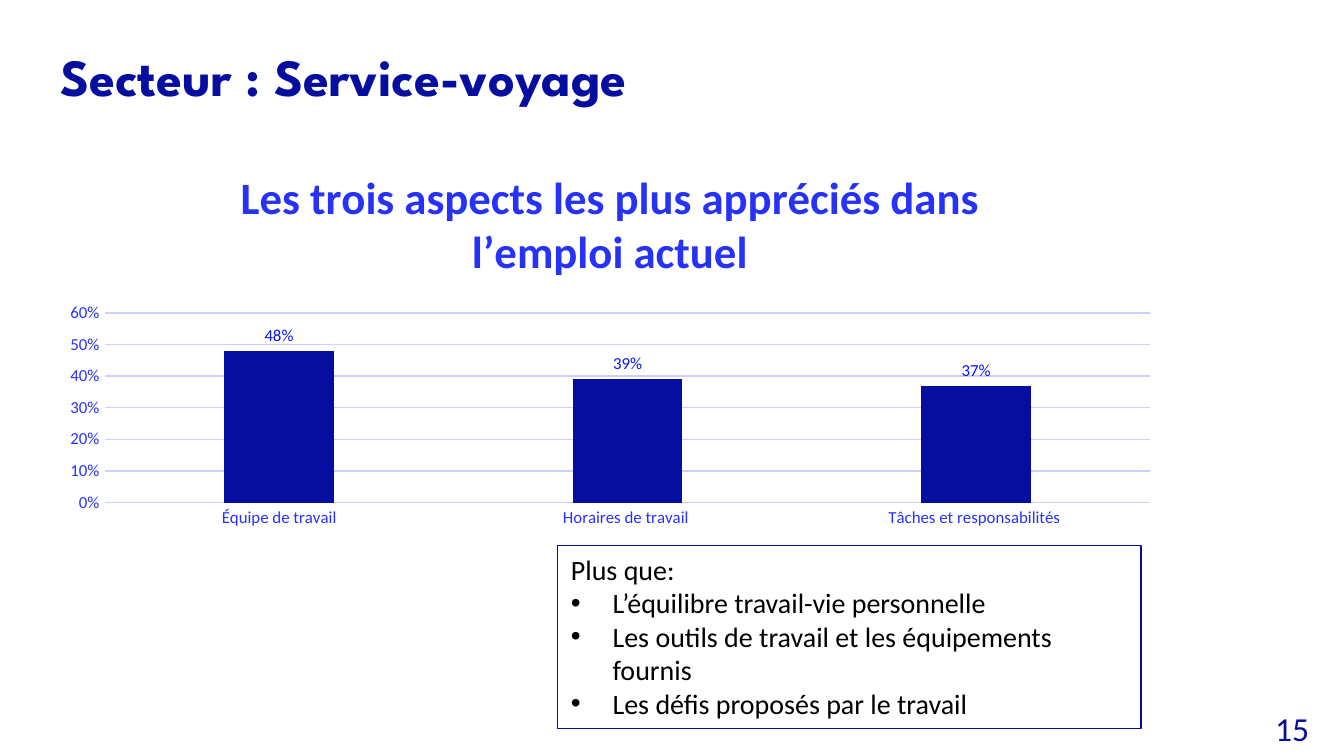
from lxml import etree
from pptx import Presentation
from pptx.chart.data import CategoryChartData as ChartData
from pptx.dml.color import RGBColor as Rgb
from pptx.enum.chart import XL_CHART_TYPE as Kind, XL_LABEL_POSITION as Spot, XL_TICK_MARK as Tick
from pptx.enum.shapes import MSO_SHAPE as Shape
from pptx.enum.text import MSO_ANCHOR as Anchor, PP_ALIGN as Align
from pptx.oxml import parse_xml
from pptx.oxml.ns import nsdecls, qn
from pptx.util import Inches, Pt

HUES = {"navy": "060E9F", "blue": "2732F7", "label": "0915F2",
        "pale": "CDD0FD", "black": "000000"}
WIDE, HIGH = 8.36, 2.9
ASPECTS = {"Équipe de travail": 0.48, "Horaires de travail ": 0.39,
           "Tâches et responsabilités ": 0.37}
OTHERS = ["L’équilibre travail-vie personnelle",
          "Les outils de travail et les équipements fournis",
          "Les défis proposés par le travail"]


def hue(name):
    """Return a named colour."""
    return Rgb.from_string(HUES[name])


def style(font, size, color, bold=False, face="Calibri"):
    """Set the look of a font."""
    font.name, font.size, font.bold = face, Pt(size), bold
    font.color.rgb = hue(color)


def stroke(line, color):
    """Give a line its colour and width."""
    line.color.rgb = hue(color)
    line.width = Pt(0.75)


def bullet(para):
    """Give a paragraph a bullet with a hanging indent."""
    props = para._p.get_or_add_pPr()
    props.set("marL", str(Inches(0.31)))
    props.set("indent", str(-Inches(0.31)))
    etree.SubElement(props, qn("a:buFont")).set("typeface", "Arial")
    etree.SubElement(props, qn("a:buChar")).set("char", "•")


def place(node, **spots):
    """Place a chart part by inches from the chart corner."""
    old = node.find(qn("c:layout"))
    if old is not None:
        node.remove(old)
    inner = '<c:layoutTarget val="inner"/>' if "w" in spots else ""
    modes = "".join(f'<c:{key}Mode val="edge"/>' for key in "xy")
    sizes = "".join(f'<c:{key} val="{val / (WIDE if key in "xw" else HIGH)}"/>'
                    for key, val in spots.items())
    layout = parse_xml(f'<c:layout {nsdecls("c")}><c:manualLayout>{inner}{modes}{sizes}'
                       '</c:manualLayout></c:layout>')
    text = node.find(qn("c:tx"))
    if text is None:
        node.insert(0, layout)
    else:
        text.addnext(layout)


def add_title(slide, text):
    """Fill the slide title."""
    title = slide.shapes.title
    title.left, title.top = Inches(0.35), Inches(0.2)
    title.width, title.height = Inches(9.33), Inches(0.72)
    frame = title.text_frame
    frame.text, frame.vertical_anchor = text, Anchor.MIDDLE
    para = frame.paragraphs[0]
    para.alignment = Align.LEFT
    style(para.font, 28, "navy", True, "League Spartan")


def add_bars(slide, title):
    """Add the column chart of aspects."""
    data = ChartData(number_format="0%")
    data.categories = list(ASPECTS)
    data.add_series("Series 1", list(ASPECTS.values()))
    chart = slide.shapes.add_chart(Kind.COLUMN_CLUSTERED, Inches(0.35), Inches(1.07),
                                   Inches(WIDE), Inches(HIGH), data).chart
    style(chart.font, 10, "navy")
    chart.has_legend = False
    head = chart.chart_title
    head.text_frame.text = title
    style(head.text_frame.paragraphs[0].font, 24, "blue", True)
    head.include_in_layout = False
    place(head._element, x=1.38, y=0.11)
    place(chart._chartSpace.chart.plotArea, x=0.43, y=1.26, w=7.78, h=1.41)

    for axis in (chart.category_axis, chart.value_axis):
        axis.major_tick_mark = axis.minor_tick_mark = Tick.NONE
        style(axis.tick_labels.font, 9, "blue")
    stroke(chart.category_axis.format.line, "pale")
    scale = chart.value_axis
    scale.minimum_scale, scale.maximum_scale, scale.major_unit = 0, 0.6, 0.1
    scale.format.line.fill.background()
    stroke(scale.major_gridlines.format.line, "pale")
    scale.tick_labels.number_format = "0%"
    scale.tick_labels.number_format_is_linked = False

    plot = chart.plots[0]
    plot.gap_width, plot.overlap, plot.vary_by_categories = 219, -27, False
    bars = plot.series[0]
    bars.format.fill.solid()
    bars.format.fill.fore_color.rgb = hue("navy")
    labels = bars.data_labels
    labels.show_value, labels.position = True, Spot.OUTSIDE_END
    labels.number_format, labels.number_format_is_linked = "0%", False
    style(labels.font, 9, "label")


def add_note(slide, lead, items):
    """Add the framed list of other aspects."""
    box = slide.shapes.add_shape(Shape.RECTANGLE, Inches(4.15), Inches(4.06),
                                 Inches(4.34), Inches(1.36))
    box.shadow.inherit = False
    box.fill.background()
    stroke(box.line, "navy")
    frame = box.text_frame
    frame.word_wrap, frame.vertical_anchor = True, Anchor.TOP
    frame.text = "\n".join([lead, *items])
    for rank, para in enumerate(frame.paragraphs):
        para.alignment = Align.LEFT
        if rank:
            bullet(para)
        style(para.font, 15, "black")


def add_page(slide, number):
    """Add the page number."""
    box = slide.shapes.add_textbox(Inches(9.39), Inches(5.22), Inches(0.53), Inches(0.3))
    frame = box.text_frame
    frame.word_wrap = True
    frame.text = number
    style(frame.paragraphs[0].font, 18, "navy")


def main():
    """Build and save the slide."""
    deck = Presentation()
    deck.slide_width, deck.slide_height = Inches(10), Inches(10 * 9 / 16)
    slide = deck.slides.add_slide(deck.slide_layouts[5])
    add_note(slide, "Plus que:", OTHERS)
    add_title(slide, "Secteur : Service-voyage")
    add_bars(slide, "Les trois aspects les plus appréciés dans l’emploi actuel")
    add_page(slide, "15")
    deck.save("out.pptx")


if __name__ == "__main__":
    main()
